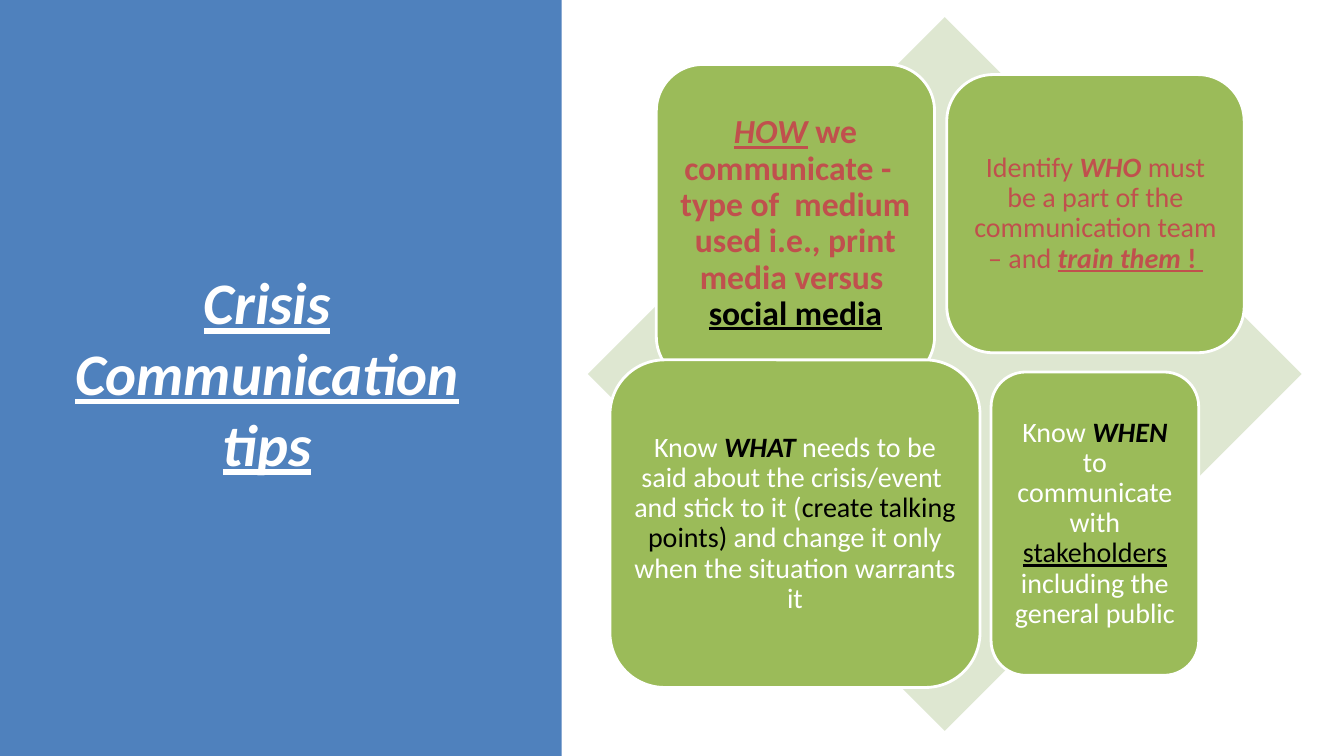
from pptx import Presentation
from pptx.dml.color import RGBColor
from pptx.enum.shapes import MSO_SHAPE
from pptx.enum.text import MSO_ANCHOR, PP_ALIGN
from pptx.util import Inches, Pt

RECTANGLE = MSO_SHAPE.RECTANGLE
DIAMOND = MSO_SHAPE.DIAMOND
ROUNDED = MSO_SHAPE.ROUNDED_RECTANGLE
MIDDLE = MSO_ANCHOR.MIDDLE
CENTER = PP_ALIGN.CENTER

COLORS = {
    "blue": "4F81BD",
    "green": "9BBB59",
    "pale": "DEE7D1",
    "red": "C0504D",
    "black": "000000",
    "white": "FFFFFF",
}
FONT = "Calibri"

TITLE = [("Crisis Communication tips", "biu", "white")]
TIPS = [
    {
        "box": (6.51, 0.64, 2.76, 3.16), "size": 24, "inset": 0.1,
        "runs": [
            ("HOW", "biu", "red"),
            (" we communicate -   type of  medium used i.e., print media versus  ", "b", "red"),
            ("social media", "bu", "black"),
        ],
    },
    {
        "box": (9.39, 0.74, 2.95, 2.76), "size": 20, "inset": 0.08,
        "runs": [
            ("Identify ", "", "red"),
            ("WHO", "bi", "red"),
            (" must be a part of the communication team – and ", "", "red"),
            ("train them ", "biu", "red"),
            ("! ", "bu", "red"),
        ],
    },
    {
        "box": (6.05, 3.57, 3.67, 3.25), "size": 20, "inset": 0.08,
        "runs": [
            ("Know ", "", "white"),
            ("WHAT", "bi", "black"),
            (" needs to be said about the crisis/event  and stick to it (", "", "white"),
            ("create talking points)", "", "black"),
            (" and change it only when the situation warrants it", "", "white"),
        ],
    },
    {
        "box": (9.83, 3.69, 2.06, 3.01), "size": 20, "inset": 0.08,
        "runs": [
            ("Know ", "", "white"),
            ("WHEN", "bi", "black"),
            (" to communicate with ", "", "white"),
            ("stakeholders", "u", "black"),
            (" including the general public", "", "white"),
        ],
    },
]


def color(name):
    return RGBColor.from_string(COLORS[name])


def add_block(slide, preset, box, fill, outline=None):
    block = slide.shapes.add_shape(preset, *map(Inches, box))
    block.shadow.inherit = False
    block.fill.solid()
    block.fill.fore_color.rgb = color(fill)
    if outline:
        block.line.color.rgb = color(outline)
        block.line.width = Pt(2)
    else:
        block.line.fill.background()
    return block


def write_text(holder, runs, size, inset=0.1, spacing=1.0):
    frame = holder.text_frame
    frame.word_wrap = True
    frame.vertical_anchor = MIDDLE
    frame.margin_left = frame.margin_right = Inches(inset)
    frame.margin_top = frame.margin_bottom = Inches(inset)
    paragraph = frame.paragraphs[0]
    paragraph.alignment = CENTER
    paragraph.line_spacing = spacing
    for words, style, ink in runs:
        run = paragraph.add_run()
        run.text = words
        run.font.name = FONT
        run.font.size = Pt(size)
        run.font.color.rgb = color(ink)
        run.font.bold = "b" in style
        run.font.italic = "i" in style
        run.font.underline = "u" in style


def main():
    deck = Presentation()
    deck.slide_width = Inches(13.33)
    deck.slide_height = Inches(7.5)
    slide = deck.slides.add_slide(deck.slide_layouts[6])

    add_block(slide, RECTANGLE, (0, 0, 5.57, 7.5), "blue")
    title = slide.shapes.add_textbox(*map(Inches, (0.57, 0.68, 4.16, 6.02)))
    write_text(title, TITLE, size=42)

    add_block(slide, DIAMOND, (5.83, 0.17, 7.08, 7.08), "pale")
    for tip in TIPS:
        card = add_block(slide, ROUNDED, tip["box"], "green", outline="white")
        write_text(card, tip["runs"], size=tip["size"], inset=tip["inset"], spacing=0.9)

    deck.save("out.pptx")


if __name__ == "__main__":
    main()
